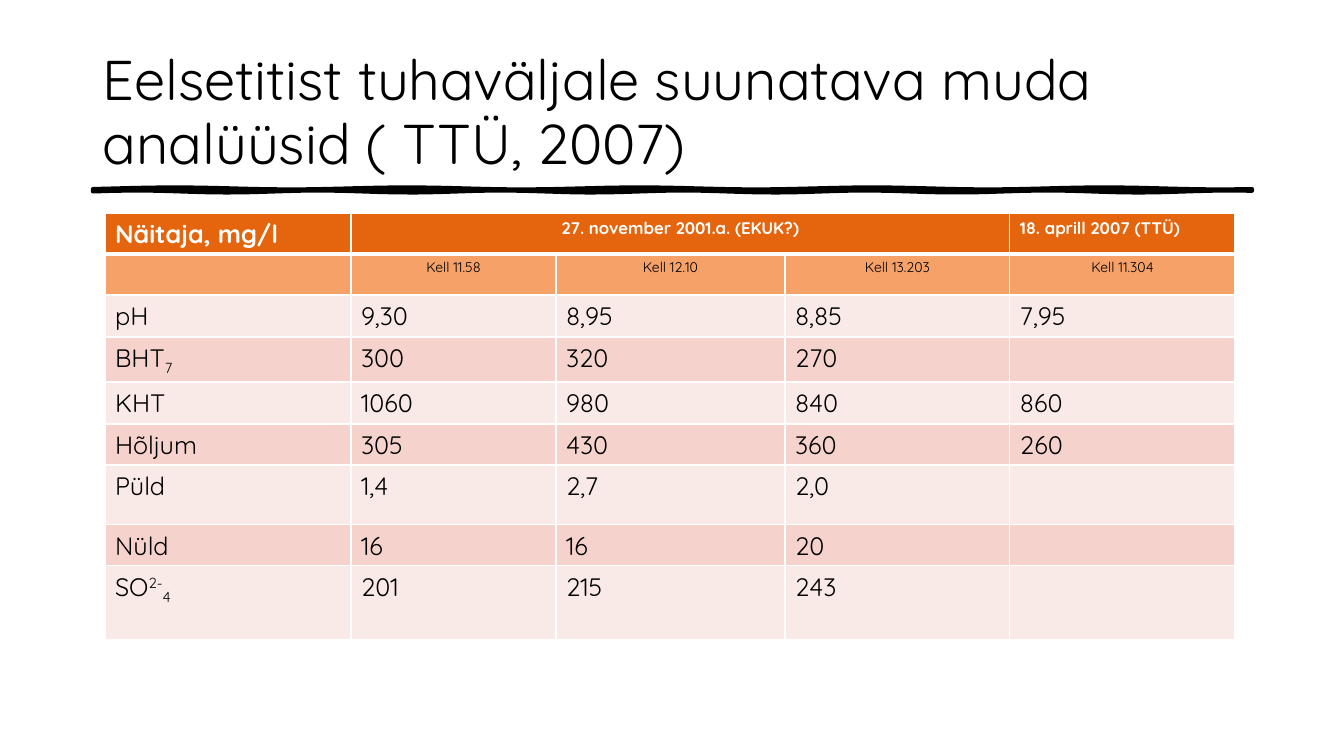
from dataclasses import dataclass
from math import sin

from lxml.etree import SubElement
from pptx import Presentation
from pptx.dml.color import RGBColor as RGB
from pptx.enum.text import MSO_ANCHOR as ANCHOR, PP_ALIGN as ALIGN
from pptx.oxml.ns import qn
from pptx.util import Pt

EMU_PER_PX = 914400 / 100.8


@dataclass(frozen=True)
class Theme:
    """Colours, font and type sizes of the slide."""
    font: str = "Quicksand"
    ink: str = "000000"
    paper: str = "FFFFFF"
    header: str = "E4650E"
    subheader: str = "F6A168"
    bands: tuple = ("FAEAE7", "F5D3CC")
    title: int = 40
    body: int = 18
    group: int = 12
    time: int = 10


THEME = Theme()
TITLE = "Eelsetitist tuhaväljale suunatava muda analüüsid ( TTÜ, 2007)"
GROUPS = ["Näitaja, mg/l", "27. november 2001.a. (EKUK?)", "", "", "18. aprill 2007 (TTÜ)"]
TIMES = ["", "Kell 11.58", "Kell 12.10", "Kell 13.203", "Kell 11.304"]
READINGS = [
    ["pH", "9,30", "8,95", "8,85", "7,95"],
    [[("BHT", 0), ("7", -25)], "300", "320", "270", ""],
    ["KHT", "1060", "980", "840", "860"],
    ["Hõljum", "305", "430", "360", "260"],
    ["Püld", "1,4", "2,7", "2,0", ""],
    ["Nüld", "16", "16", "20", ""],
    [[("SO", 0), ("2-", 30), ("4", -25)], "201", "215", "243", ""],
]
COLUMNS = [246, 205, 229, 225, 225]
ROWS = [41, 41, 42, 45, 42, 41, 60, 41, 74]


def px(n):
    """Turn pixels into EMU."""
    return round(n * EMU_PER_PX)


def write(tf, text, size, color=THEME.ink, bold=False, align=ALIGN.LEFT, spacing=None):
    """Write a string, or (text, baseline) pairs, as one paragraph."""
    p = tf.paragraphs[0]
    p.alignment = align
    if spacing:
        p.line_spacing = spacing
    for part, baseline in [(text, 0)] if isinstance(text, str) else text:
        r = p.add_run()
        r.text = part
        r.font.name, r.font.size, r.font.bold = THEME.font, Pt(size), bold
        r.font.color.rgb = RGB.from_string(color)
        if baseline:
            r._r.get_or_add_rPr().set("baseline", str(baseline * 1000))


def add_title(s):
    """Add the slide title."""
    tf = s.shapes.add_textbox(px(93), px(40), px(1159), px(146)).text_frame
    tf.word_wrap = True
    tf.vertical_anchor = ANCHOR.MIDDLE
    write(tf, TITLE, THEME.title, spacing=0.95)


def add_brush_line(s):
    """Add the uneven brush stroke under the title."""
    left, right, step = 93, 1252, 19
    xs = range(left, right + 1, step)
    top = [(px(x), px(188.5 + sin(x / 37))) for x in xs]
    bottom = [(px(x), px(191.5 + sin(x / 29))) for x in reversed(xs)]
    builder = s.shapes.build_freeform(*top[0])
    builder.add_line_segments(top[1:] + bottom, close=True)
    sp = builder.convert_to_shape()
    sp.shadow.inherit = False
    sp.fill.solid()
    sp.fill.fore_color.rgb = RGB.from_string(THEME.ink)
    sp.line.color.rgb = RGB.from_string(THEME.ink)
    sp.line.width = Pt(3)


def paint(cell, color, bottom=1, top=1):
    """Give a cell its white borders and its fill."""
    tcPr = cell._tc.get_or_add_tcPr()
    for side, width in (("L", 1), ("R", 1), ("T", top), ("B", bottom)):
        ln = SubElement(tcPr, qn(f"a:ln{side}"), w=str(Pt(width)))
        SubElement(SubElement(ln, qn("a:solidFill")), qn("a:srgbClr"), val=THEME.paper)
    cell.fill.solid()
    cell.fill.fore_color.rgb = RGB.from_string(color)


def fill_row(table, row, texts, color, formats, **borders):
    """Paint a row and write its texts, one format per column."""
    for col, (text, fmt) in enumerate(zip(texts, formats)):
        cell = table.cell(row, col)
        paint(cell, color, **borders)
        if text:
            write(cell.text_frame, text, **fmt)


def add_readings(s):
    """Add the table of sludge analyses."""
    frame = s.shapes.add_table(len(ROWS), len(COLUMNS), px(105), px(213),
                               px(sum(COLUMNS)), px(sum(ROWS)))
    table = frame.table
    table.first_row = table.horz_banding = False
    for column, width in zip(table.columns, COLUMNS):
        column.width = px(width)
    for row, height in zip(table.rows, ROWS):
        row.height = px(height)
    table.cell(0, 1).merge(table.cell(0, 3))

    head = dict(size=THEME.body, color=THEME.paper, bold=True)
    group = head | dict(size=THEME.group)
    centred = group | dict(align=ALIGN.CENTER)
    time = dict(size=THEME.time, align=ALIGN.CENTER)
    fill_row(table, 0, GROUPS, THEME.header, [head] + [centred] * 3 + [group], bottom=3)
    fill_row(table, 1, TIMES, THEME.subheader, [time] * 5, top=3)
    for i, texts in enumerate(READINGS):
        fill_row(table, i + 2, texts, THEME.bands[i % 2], [dict(size=THEME.body)] * 5)


def main():
    """Build the slide and save it."""
    prs = Presentation()
    prs.slide_width, prs.slide_height = px(1344), px(756)
    s = prs.slides.add_slide(prs.slide_layouts[6])
    add_brush_line(s)
    add_title(s)
    add_readings(s)
    prs.save("out.pptx")


if __name__ == "__main__":
    main()
